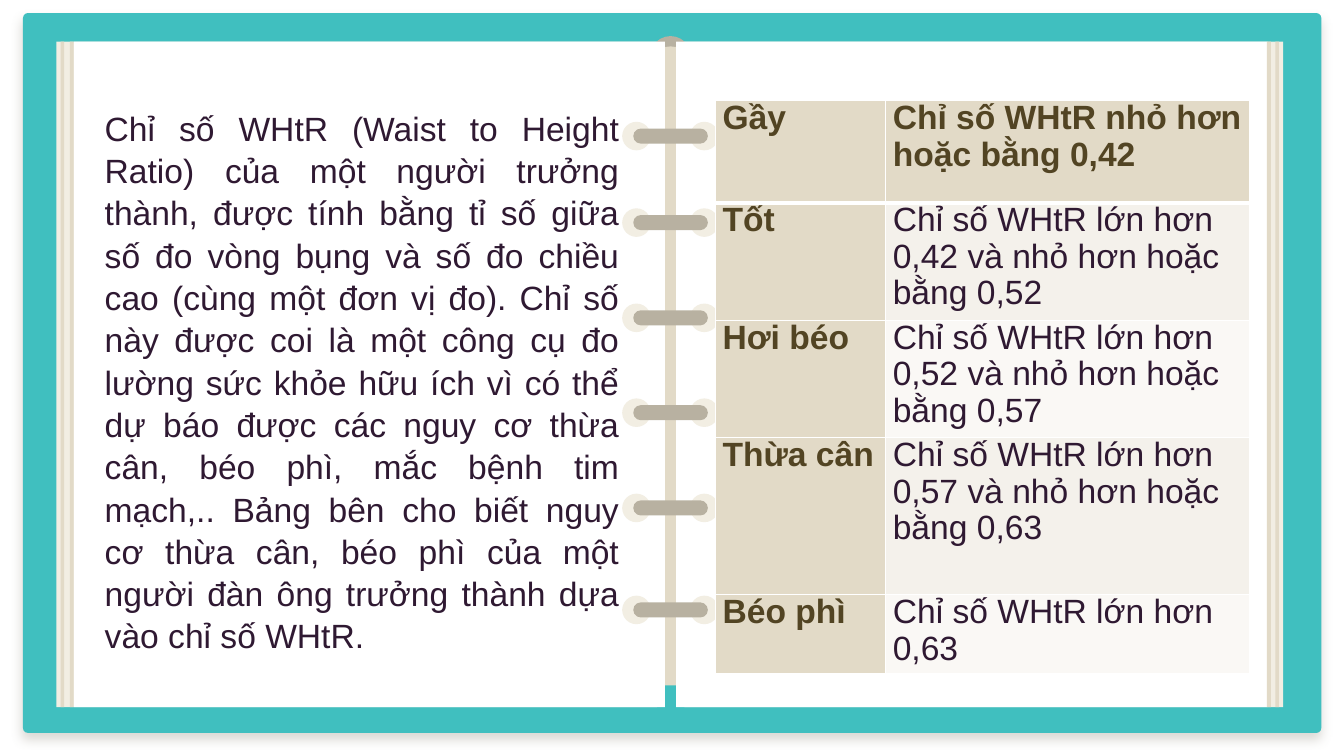
from typing import NamedTuple

from lxml.etree import SubElement
from pptx import Presentation
from pptx.dml.color import RGBColor
from pptx.enum.shapes import MSO_SHAPE as Shape
from pptx.enum.text import PP_ALIGN as Align
from pptx.oxml.ns import qn
from pptx.util import Cm, Pt

COLORS = {
    "cover": "40BFBF", "paper": "FFFFFF", "edge": "F2EEE3", "sand": "E2DAC7",
    "ring": "B8B1A1", "shadow": "918C7F", "text": "2F1932", "label": "524423",
    "band_dark": "F4F1EB", "band_light": "FAF8F5",
}
FONT = {"name": "Arial", "size": Pt(24)}


class Part(NamedTuple):
    """A filled piece of the notebook, in centimetres."""
    left: float
    top: float
    width: float
    height: float
    color: str
    kind: Shape = Shape.RECTANGLE


class Level(NamedTuple):
    name: str
    rule: str
    height: float
    fill: str


PAGE_TOP, PAGE_HEIGHT = 1.05, 16.77
COVER = Part(0.58, 0.33, 32.72, 18.14, "cover", Shape.ROUNDED_RECTANGLE)


def sheet(left: float, width: float, color: str) -> Part:
    """A full-height strip or page."""
    return Part(left, PAGE_TOP, width, PAGE_HEIGHT, color)


BOOK = [
    Part(15.93, 0.33, 2.01, 18.14, "cover"),
    sheet(1.42, 15.14, "edge"),
    Part(16.66, 1.78, 0.43, 15.49, "sand"),
    Part(16.38, 0.91, 1.04, 1.04, "ring", Shape.OVAL),
    Part(16.38, 1.17, 1.04, 0.91, "sand", Shape.OVAL),
    sheet(17.25, 15.09, "edge"),
    sheet(17.04, 14.9, "paper"),
    sheet(1.86, 14.9, "paper"),
    sheet(1.53, 0.09, "sand"),
    sheet(1.76, 0.1, "sand"),
    sheet(32.14, 0.09, "sand"),
    sheet(31.93, 0.1, "sand"),
]
RING_CENTERS = [3.43, 5.61, 8.01, 10.4, 12.8, 15.37]
HOLE, BAR_HEIGHT = 0.72, 0.38

INTRO = (
    "Chỉ số WHtR (Waist to Height Ratio) của một người trưởng thành, được tính "
    "bằng tỉ số giữa số đo vòng bụng và số đo chiều cao (cùng một đơn vị đo). "
    "Chỉ số này được coi là một công cụ đo lường sức khỏe hữu ích vì có thể dự "
    "báo được các nguy cơ thừa cân, béo phì, mắc bệnh tim mạch,.. Bảng bên cho "
    "biết nguy cơ thừa cân, béo phì của một người đàn ông trưởng thành dựa vào "
    "chỉ số WHtR."
)
LEVELS = [
    Level("Gầy", "Chỉ số WHtR nhỏ hơn hoặc bằng 0,42", 2.57, "sand"),
    Level("Tốt", "Chỉ số WHtR lớn hơn 0,42 và nhỏ hơn hoặc bằng 0,52", 2.57, "band_dark"),
    Level("Hơi béo", "Chỉ số WHtR lớn hơn 0,52 và nhỏ hơn hoặc bằng 0,57", 2.57, "band_light"),
    Level("Thừa cân", "Chỉ số WHtR lớn hơn 0,57 và nhỏ hơn hoặc bằng 0,63", 3.96, "band_dark"),
    Level("Béo phì", "Chỉ số WHtR lớn hơn 0,63", 1.93, "band_light"),
]
COLUMNS = [4.29, 9.17]


def rgb(color: str) -> RGBColor:
    return RGBColor.from_string(COLORS[color])


def draw_part(shapes, part: Part):
    s = shapes.add_shape(part.kind, Cm(part.left), Cm(part.top), Cm(part.width), Cm(part.height))
    s.shadow.inherit = False
    s.fill.solid()
    s.fill.fore_color.rgb = rgb(part.color)
    s.line.fill.background()
    return s


def draw_cover(shapes) -> None:
    s = draw_part(shapes, COVER)
    s.adjustments[0] = 0.007
    effects = s._element.spPr.find(qn("a:effectLst"))
    shadow = SubElement(effects, qn("a:outerShdw"), blurRad=str(Pt(7.9)), dist=str(Pt(5.2)),
                        dir="5400000", algn="t", rotWithShape="0")
    color = SubElement(shadow, qn("a:srgbClr"), val=COLORS["shadow"])
    SubElement(color, qn("a:alpha"), val="32000")


def draw_rings(shapes) -> None:
    for y in RING_CENTERS:
        for x in (15.68, 17.39):
            draw_part(shapes, Part(x, y - HOLE / 2, HOLE, HOLE, "edge", Shape.OVAL))
        bar = Part(15.96, y - BAR_HEIGHT / 2, 1.88, BAR_HEIGHT, "ring", Shape.ROUNDED_RECTANGLE)
        draw_part(shapes, bar).adjustments[0] = 0.5


def write(p, text: str, color: str, bold: bool = False) -> None:
    r = p.add_run()
    r.text = text
    for key, value in {**FONT, "bold": bold}.items():
        setattr(r.font, key, value)
    r.font.color.rgb = rgb(color)


def draw_intro(shapes) -> None:
    tf = shapes.add_textbox(Cm(2.39), Cm(2.54), Cm(13.46), Cm(13.59)).text_frame
    tf.word_wrap = True
    p = tf.paragraphs[0]
    p.alignment = Align.JUSTIFY
    p.line_spacing = 1.05
    write(p, INTRO, "text")


def add_borders(cell, widths: dict[str, float]) -> None:
    """White borders; they go before the cell's fill."""
    tc_pr = cell._tc.get_or_add_tcPr()
    for i, (side, width) in enumerate(widths.items()):
        ln = SubElement(tc_pr, qn(f"a:ln{side}"), w=str(Pt(width)))
        fill = SubElement(ln, qn("a:solidFill"))
        SubElement(fill, qn("a:srgbClr"), val=COLORS["paper"])
        tc_pr.insert(i, ln)


def draw_levels(shapes) -> None:
    height = sum(level.height for level in LEVELS)
    table = shapes.add_table(len(LEVELS), len(COLUMNS), Cm(18.03), Cm(2.54),
                             Cm(sum(COLUMNS)), Cm(height)).table
    table.first_row = table.horz_banding = False
    for column, width in zip(table.columns, COLUMNS):
        column.width = Cm(width)
    margins = {"margin_left": Cm(0.18), "margin_right": Cm(0.18), "margin_top": 0, "margin_bottom": 0}
    for i, level in enumerate(LEVELS):
        table.rows[i].height = Cm(level.height)
        for j, text in enumerate((level.name, level.rule)):
            cell = table.cell(i, j)
            strong = i == 0 or j == 0
            for key, value in margins.items():
                setattr(cell, key, value)
            cell.fill.solid()
            cell.fill.fore_color.rgb = rgb("sand" if strong else level.fill)
            add_borders(cell, {"L": 1, "R": 1, "T": 3 if i == 1 else 1, "B": 3 if i == 0 else 1})
            p = cell.text_frame.paragraphs[0]
            p.space_after = Pt(6)
            p.line_spacing = 0.97
            write(p, text, "label" if strong else "text", strong)


def main() -> None:
    prs = Presentation()
    prs.slide_width, prs.slide_height = Cm(33.87), Cm(19.05)
    shapes = prs.slides.add_slide(prs.slide_layouts[6]).shapes
    draw_cover(shapes)
    for part in BOOK:
        draw_part(shapes, part)
    draw_rings(shapes)
    draw_intro(shapes)
    draw_levels(shapes)
    prs.save("out.pptx")


if __name__ == "__main__":
    main()
